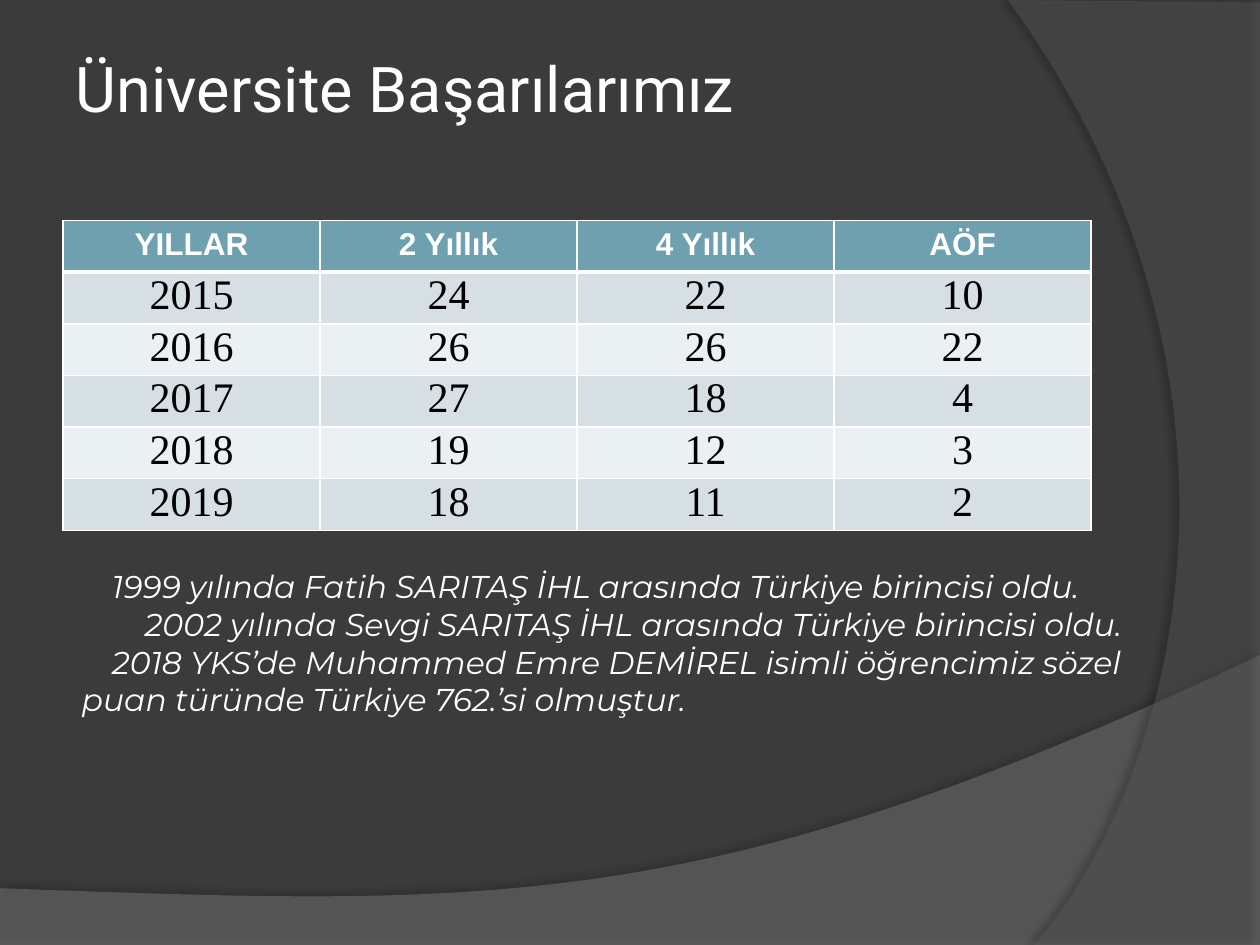
from lxml import etree
from pptx import Presentation, util as u
from pptx.dml.color import RGBColor
from pptx.enum import text as t
from pptx.oxml.ns import qn

# Content
TITLE = "Üniversite Başarılarımız"
HEADER = ["YILLAR", "2 Yıllık", "4 Yıllık", "AÖF"]
RESULTS = [
    (2015, 24, 22, 10),
    (2016, 26, 26, 22),
    (2017, 27, 18, 4),
    (2018, 19, 12, 3),
    (2019, 18, 11, 2),
]
NOTES = [  # text, first-line indent
    ("1999 yılında Fatih SARITAŞ İHL arasında Türkiye birincisi oldu.", 0.24),
    ("2002 yılında Sevgi SARITAŞ İHL arasında Türkiye birincisi oldu.", 0.5),
    ("2018 YKS’de Muhammed Emre DEMİREL isimli öğrencimiz sözel puan türünde "
     "Türkiye 762.’si olmuştur.", 0.24),
]

# Theme
THEME = {
    "background": "3B3B3B", "white": "FFFFFF", "header": "6EA0B0",
    "bands": ["D5DFE4", "EBF0F2"],
    "title": dict(name="Roboto", size=36, color="FFFFFF"),
    "head": dict(name="Arial", size=18, color="FFFFFF", bold=True),
    "body": dict(name="Times New Roman", size=24, color="000000", bold=False),
    "note": dict(name="Montserrat", size=18, color="FFFFFF", italic=True),
}
WIDTH, HEIGHT = 10, 7.5

# Background waves: outline corners, then a Bezier of four control points
WAVES = [
    dict(corners=[(0, 7.05), (0, 7.5), (10, 7.5)],
         curve=[(10, 5.2), (5.59, 7.29), (3.91, 7.19), (0, 7.05)],
         color="7F7F7F", opacity=45, shadow=dict(opacity=35, distance=3.5, angle=270)),
    dict(corners=[(10, 0.02), (10, 7.5)],
         curve=[(8.21, 7.5), (9.35, 6.19), (10.18, 3), (8, 0)],
         color="5E5E5E", opacity=40, shadow=dict(opacity=45, distance=4, angle=180)),
]


def set_values(target, values):
    for name, value in values.items():
        setattr(target, name, value)


def write(paragraph, content, style, alignment):
    paragraph.alignment = alignment
    run = paragraph.add_run()
    run.text = str(content)
    values = dict(style, size=u.Pt(style["size"]))
    color = values.pop("color")
    set_values(run.font, values)
    run.font.color.rgb = RGBColor.from_string(color)


def paint(fill, color):
    fill.solid()
    fill.fore_color.rgb = RGBColor.from_string(color)


def add_alpha(color_element, percent):
    etree.SubElement(color_element, qn("a:alpha"), val=str(percent * 1000))


def bezier(points, steps=60):
    for step in range(steps + 1):
        s = step / steps
        weights = [(1 - s) ** 3, 3 * s * (1 - s) ** 2, 3 * s * s * (1 - s), s ** 3]
        yield tuple(sum(w * p[axis] for w, p in zip(weights, points)) for axis in (0, 1))


def add_wave(slide, corners, curve, color, opacity, shadow):
    start, *rest = [(u.Inches(x), u.Inches(y)) for x, y in corners + list(bezier(curve))]
    builder = slide.shapes.build_freeform(*start)
    builder.add_line_segments(rest, close=True)
    shape = builder.convert_to_shape()
    paint(shape.fill, color)
    shape.line.fill.background()
    properties = shape.fill._xPr
    add_alpha(properties.find(qn("a:solidFill"))[0], opacity)
    shape.shadow.inherit = False
    outer = etree.SubElement(
        properties.find(qn("a:effectLst")), qn("a:outerShdw"),
        blurRad=str(u.Pt(4)), dist=str(u.Pt(shadow["distance"])),
        dir=str(shadow["angle"] * 60000), algn="ctr", rotWithShape="0")
    add_alpha(etree.SubElement(outer, qn("a:srgbClr"), val="000000"), shadow["opacity"])


def set_borders(cell, widths):
    properties = cell._tc.get_or_add_tcPr()
    for position, (side, width) in enumerate(widths.items()):
        line = etree.Element(qn(f"a:ln{side}"), w=str(u.Pt(width)))
        fill = etree.SubElement(line, qn("a:solidFill"))
        etree.SubElement(fill, qn("a:srgbClr"), val=THEME["white"])
        properties.insert(position, line)


def add_results(slide, left, top, column, row):
    rows = [HEADER] + RESULTS
    frame = slide.shapes.add_table(
        len(rows), len(HEADER), u.Inches(left), u.Inches(top),
        u.Inches(column * len(HEADER)), u.Inches(row * len(rows)))
    for table_row in frame.table.rows:
        table_row.height = u.Inches(row)
    for r, values in enumerate(rows):
        for c, value in enumerate(values):
            cell = frame.table.cell(r, c)
            if r:
                set_values(cell, dict(margin_left=u.Inches(0.05), margin_right=u.Inches(0.05),
                                      margin_top=0, margin_bottom=0))
            paint(cell.fill, THEME["bands"][(r - 1) % 2] if r else THEME["header"])
            set_borders(cell, {"L": 1, "R": 1, "T": 3 if r == 1 else 1, "B": 1 if r else 3})
            write(cell.text_frame.paragraphs[0], value,
                  THEME["body" if r else "head"], t.PP_ALIGN.CENTER)


def main():
    presentation = Presentation()
    set_values(presentation, dict(slide_width=u.Inches(WIDTH), slide_height=u.Inches(HEIGHT)))
    slide = presentation.slides.add_slide(presentation.slide_layouts[5])
    paint(slide.background.fill, THEME["background"])

    # Waves, with the title raised above them
    for wave in WAVES:
        add_wave(slide, **wave)
    title = slide.shapes.title
    slide.shapes._spTree.append(title._element)

    # Title
    set_values(title, dict(left=u.Inches(0.55), top=u.Inches(0.33),
                           width=u.Inches(8.17), height=u.Inches(0.72)))
    margins = {f"margin_{side}": u.Inches(0.05) for side in ("left", "top", "right", "bottom")}
    set_values(title.text_frame, dict(margins, vertical_anchor=t.MSO_ANCHOR.MIDDLE,
                                      auto_size=t.MSO_AUTO_SIZE.NONE, word_wrap=True))
    write(title.text_frame.paragraphs[0], TITLE, THEME["title"], t.PP_ALIGN.LEFT)

    # Table
    add_results(slide, left=0.5, top=1.75, column=2.04, row=0.41)

    # Notes
    box = slide.shapes.add_textbox(u.Inches(0.55), u.Inches(4.45), u.Inches(8.98), u.Inches(1.92))
    box.text_frame.word_wrap = True
    for index, (content, indent) in enumerate(NOTES):
        paragraph = box.text_frame.add_paragraph() if index else box.text_frame.paragraphs[0]
        write(paragraph, content, THEME["note"], t.PP_ALIGN.LEFT)
        paragraph._p.get_or_add_pPr().set("indent", str(u.Inches(indent)))

    presentation.save("out.pptx")


if __name__ == "__main__":
    main()
